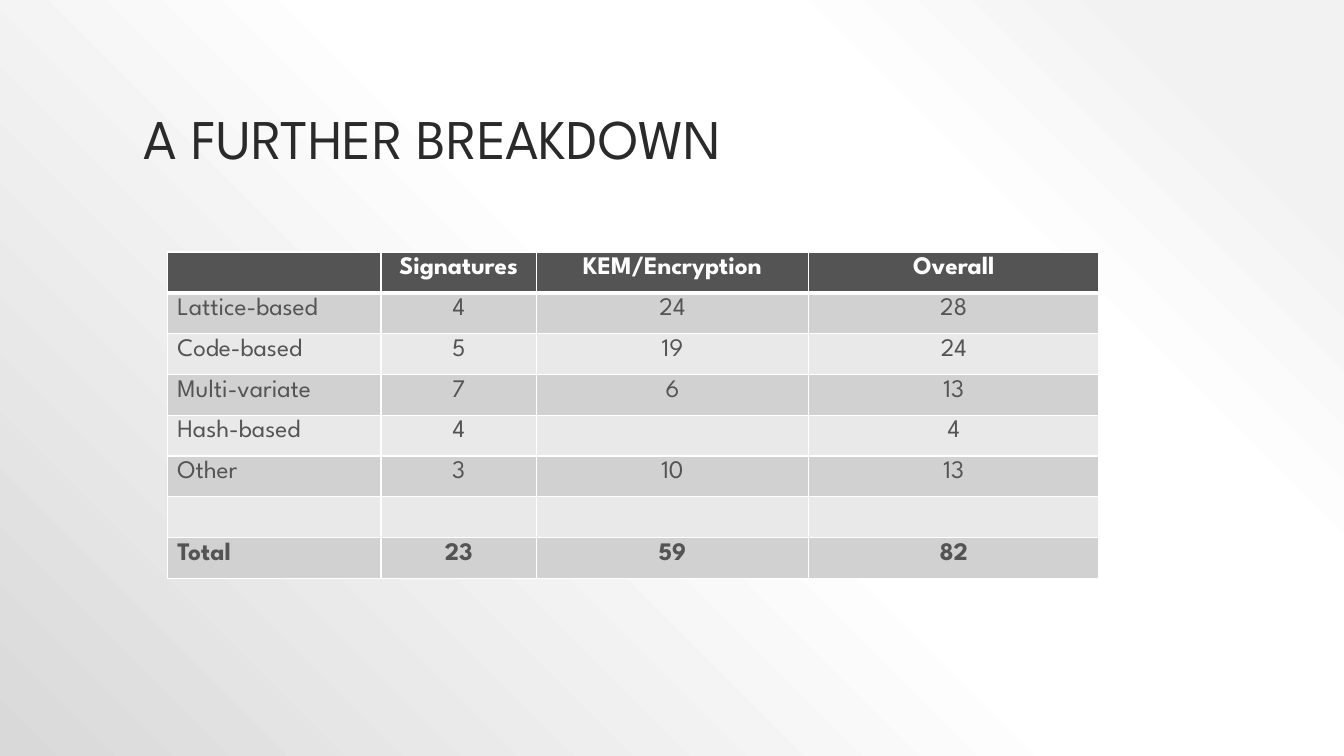
from pptx import Presentation
from pptx.dml.color import RGBColor
from pptx.enum import text
from pptx.oxml import parse_xml
from pptx.oxml.ns import nsdecls
from pptx.util import Inches, Pt

TITLE = "A FURTHER BREAKDOWN"
BREAKDOWN = [
    ("", "Signatures", "KEM/Encryption", "Overall"),
    ("Lattice-based", "4", "24", "28"),
    ("Code-based", "5", "19", "24"),
    ("Multi-variate", "7", "6", "13"),
    ("Hash-based", "4", "", "4"),
    ("Other", "3", "10", "13"),
    ("", "", "", ""),
    ("Total", "23", "59", "82"),
]
COLUMN_WIDTHS = [2.12, 1.54, 2.7, 2.88]
ROW_HEIGHT = 0.405
BACKDROP_STOPS = [(10, "F2F2F2"), (28, "FFFFFF"), (48, "FFFFFF"), (100, "D9D9D9")]

FONT = "League Spartan"
INK, DARK, WHITE = "2A2A2A", "545454", "FFFFFF"
BANDS = ["E9E9E9", "D1D1D1"]


def rgb(value):
    return RGBColor.from_string(value)


def add_run(paragraph, words, size, color, bold=False):
    run = paragraph.add_run()
    run.text = words
    run.font.name = FONT
    run.font.size = Pt(size)
    run.font.bold = bold
    run.font.color.rgb = rgb(color)


def paint_backdrop(slide):
    """Fill the background with a radial gradient centred on the top right corner."""
    stops = "".join(
        f'<a:gs pos="{position * 1000}"><a:srgbClr val="{color}"/></a:gs>'
        for position, color in BACKDROP_STOPS
    )
    slide.element.cSld.insert(0, parse_xml(
        f'<p:bg {nsdecls("p", "a")}><p:bgPr><a:gradFill rotWithShape="1">'
        f'<a:gsLst>{stops}</a:gsLst><a:path path="circle">'
        '<a:fillToRect l="100000" b="100000"/></a:path></a:gradFill>'
        '<a:effectLst/></p:bgPr></p:bg>'
    ))


def set_borders(cell, **widths):
    """Draw white borders; widths in points are keyed L, R, T, B."""
    properties = cell._tc.get_or_add_tcPr()
    for side, width in widths.items():
        properties.append(parse_xml(
            f'<a:ln{side} {nsdecls("a")} w="{Pt(width)}"><a:solidFill>'
            f'<a:srgbClr val="{WHITE}"/></a:solidFill></a:ln{side}>'
        ))


def add_title(slide):
    frame = slide.shapes.add_textbox(
        Inches(1.33), Inches(0.3), Inches(10.67), Inches(1.45)).text_frame
    frame.word_wrap = True
    frame.vertical_anchor = text.MSO_ANCHOR.BOTTOM
    heading = frame.paragraphs[0]
    heading.line_spacing = 0.9
    add_run(heading, TITLE, 40, INK)


def add_breakdown(slide):
    last = len(BREAKDOWN) - 1
    table = slide.shapes.add_table(
        len(BREAKDOWN), len(COLUMN_WIDTHS), Inches(1.66), Inches(2.5),
        Inches(sum(COLUMN_WIDTHS)), Inches(ROW_HEIGHT * len(BREAKDOWN))).table
    for column, width in zip(table.columns, COLUMN_WIDTHS):
        column.width = Inches(width)

    for r, row in enumerate(BREAKDOWN):
        header = r == 0
        for c, words in enumerate(row):
            cell = table.cell(r, c)
            set_borders(cell, L=1, R=1, T=3 if r == 1 else 1, B=3 if header else 1)
            cell.fill.solid()
            cell.fill.fore_color.rgb = rgb(DARK if header else BANDS[r % 2])
            paragraph = cell.text_frame.paragraphs[0]
            if c:
                paragraph.alignment = text.PP_ALIGN.CENTER
            if words:
                add_run(paragraph, words, 18, WHITE if header else DARK,
                        bold=r in (0, last))


def main():
    deck = Presentation()
    deck.slide_width, deck.slide_height = Inches(13.33), Inches(7.5)
    slide = deck.slides.add_slide(deck.slide_layouts[6])
    paint_backdrop(slide)
    add_title(slide)
    add_breakdown(slide)
    deck.save("out.pptx")


if __name__ == "__main__":
    main()
